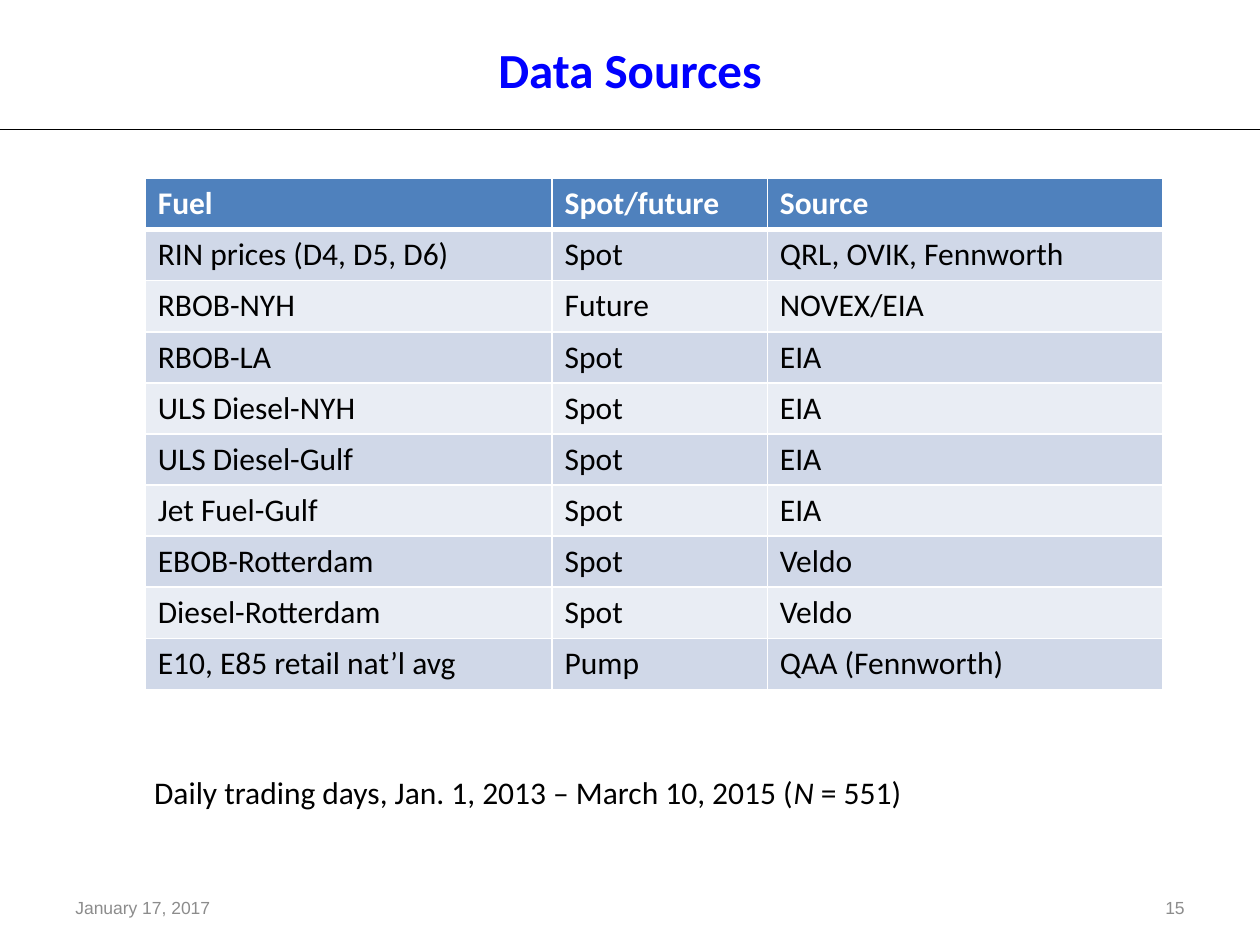
from pptx import Presentation
from pptx.dml.color import RGBColor
from pptx.enum.shapes import MSO_CONNECTOR as Connector
from pptx.enum.text import MSO_ANCHOR as Anchor, PP_ALIGN as Align
from pptx.oxml.ns import qn
from pptx.util import Pt
from lxml.etree import SubElement

BLACK = RGBColor(0x00, 0x00, 0x00)
WHITE = RGBColor(0xFF, 0xFF, 0xFF)
BLUE = RGBColor(0x00, 0x00, 0xFF)
GREY = RGBColor(0x8C, 0x8C, 0x8C)
HEADER = RGBColor(0x4F, 0x81, 0xBD)
BANDS = [RGBColor(0xE9, 0xED, 0xF4), RGBColor(0xD0, 0xD8, 0xE8)]

TITLE = {"name": "Calibri", "size": Pt(28), "bold": True}
BODY = {"name": "Calibri", "size": Pt(18), "bold": False}
HEADING = {**BODY, "bold": True}
FOOTER = {"name": "Arial", "size": Pt(10)}

SOURCES = [
    ("Fuel", "Spot/future", "Source"),
    ("RIN prices (D4, D5, D6)", "Spot", "QRL, OVIK, Fennworth"),
    ("RBOB-NYH", "Future", "NOVEX/EIA"),
    ("RBOB-LA", "Spot", "EIA"),
    ("ULS Diesel-NYH", "Spot", "EIA"),
    ("ULS Diesel-Gulf", "Spot", "EIA"),
    ("Jet Fuel-Gulf", "Spot", "EIA"),
    ("EBOB-Rotterdam", "Spot", "Veldo"),
    ("Diesel-Rotterdam", "Spot", "Veldo"),
    ("E10, E85 retail nat’l avg", "Pump", "QAA (Fennworth)"),
]


class SlideBuilder:
    def __init__(self, slide):
        self.slide = slide

    def add_words(self, paragraph, words, style, color, **changes):
        run = paragraph.add_run()
        run.text = words
        for attribute, value in {**style, **changes}.items():
            setattr(run.font, attribute, value)
        run.font.color.rgb = color

    def title(self, words, left, top, width, height):
        heading = self.slide.shapes.title
        place = {"left": left, "top": top, "width": width, "height": height}
        for attribute, value in place.items():
            setattr(heading, attribute, Pt(value))
        heading.text_frame.vertical_anchor = Anchor.BOTTOM
        paragraph = heading.text_frame.paragraphs[0]
        paragraph.alignment = Align.CENTER
        self.add_words(paragraph, words, TITLE, BLUE)

    def rule(self, left, right, y):
        divider = self.slide.shapes.add_connector(
            Connector.STRAIGHT, Pt(left), Pt(y), Pt(right), Pt(y))
        divider.line.color.rgb = BLACK
        divider.line.width = Pt(0.75)
        SubElement(divider._element.spPr, qn("a:effectLst"))

    def text(self, pieces, box, style, color, align=Align.LEFT, anchor=Anchor.TOP):
        frame = self.slide.shapes.add_textbox(*map(Pt, box)).text_frame
        frame.word_wrap = True
        frame.vertical_anchor = anchor
        paragraph = frame.paragraphs[0]
        paragraph.alignment = align
        for words, changes in pieces:
            self.add_words(paragraph, words, style, color, **changes)

    def border(self, cell, side, width):
        properties = cell._tc.get_or_add_tcPr()
        edge = SubElement(properties, qn(f"a:ln{side}"), w=str(Pt(width)))
        SubElement(SubElement(edge, qn("a:solidFill")), qn("a:srgbClr"), val=str(WHITE))

    def table(self, rows, left, top, widths, row_height):
        grid = self.slide.shapes.add_table(
            len(rows), len(widths), Pt(left), Pt(top),
            Pt(sum(widths)), Pt(row_height * len(rows))).table
        for column, width in zip(grid.columns, widths):
            column.width = Pt(width)
        for r, entries in enumerate(rows):
            is_header = r == 0
            for c, words in enumerate(entries):
                cell = grid.cell(r, c)
                edges = {"L": 1, "R": 1, "T": 3 if r == 1 else 1, "B": 3 if is_header else 1}
                for side, width in edges.items():
                    self.border(cell, side, width)
                cell.fill.solid()
                cell.fill.fore_color.rgb = HEADER if is_header else BANDS[r % 2]
                self.add_words(cell.text_frame.paragraphs[0], words,
                               HEADING if is_header else BODY,
                               WHITE if is_header else BLACK)


def main():
    deck = Presentation()
    deck.slide_width, deck.slide_height = Pt(720), Pt(540)
    builder = SlideBuilder(deck.slides.add_slide(deck.slide_layouts[5]))
    builder.rule(0, 720, 74)
    builder.title("Data Sources", 0, 6, 720, 54)
    builder.text([("January 17, 2017", {})], (36, 504, 252, 28.8),
                 FOOTER, GREY, anchor=Anchor.MIDDLE)
    builder.text([("15", {})], (516, 504, 168, 28.8),
                 FOOTER, GREY, Align.RIGHT, Anchor.MIDDLE)
    builder.text([("Daily trading days, Jan. 1, 2013 – March 10, 2015 (", {}),
                  ("N", {"italic": True}), (" = 551)", {})],
                 (81, 438, 462, 29), BODY, BLACK)
    builder.table(SOURCES, 83, 102, (232.5, 123, 226), 29.2)
    deck.save("out.pptx")


if __name__ == "__main__":
    main()
